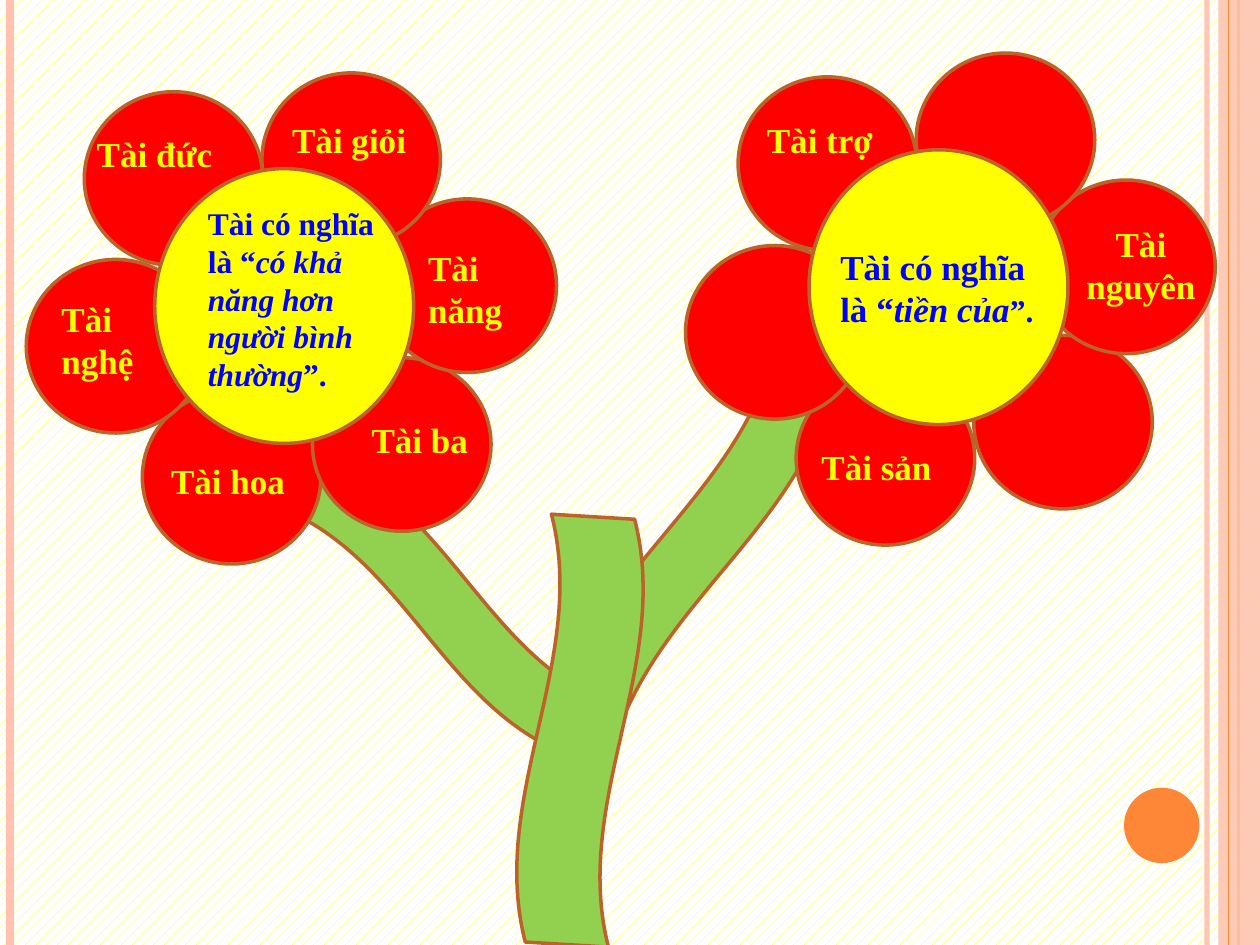
from lxml import etree
from pptx import Presentation
from pptx import util as u
from pptx.dml.color import RGBColor
from pptx.enum import dml, shapes, text
from pptx.oxml.ns import qn

COLORS = {"peach": "FEC3AE", "orange": "FE8637", "green": "92D050", "brown": "BC6329",
          "red": "FF0000", "yellow": "FFFF00", "blue": "0000FF", "white": "FFFFFF"}
FONT = "Times New Roman"
SLIDE_WIDTH, SLIDE_HEIGHT = 25.4, 19.05  # all lengths in cm
PETAL_SIZE = (3.6, 3.5)
HEART_SIZE = (5.22, 5.54)

# Border rules: x, colour, width in points, opacity in percent
LEFT_RULES = [(24.33, "peach", 3, 93), (0.2, "peach", 4.5, 100), (24.97, "orange", 1.5, 100)]
BAND_RULE = (24.77, "orange", 0.75, 100)
BAND = (24.56, 0, 0.84, SLIDE_HEIGHT)
DOT = (22.66, 15.88, 1.52, 1.52)

# Stems: box and rotation
BRANCHES = [((5.38, 11.33, 7.19, 1.78), 221.8), ((9.8, 10.24, 8.31, 1.85), 121.8)]
TRUNK = ((7.37, 13.61, 8.64, 2.24), 93.5)

# Flowers: petal corners, heart corner, caption box, caption runs (text, size, italic)
FLOWERS = [
    {"petals": [(2.87, 7.87), (0.53, 5.23), (1.7, 1.85), (6.3, 7.21), (7.62, 4.01), (5.28, 1.47)],
     "heart": (3.12, 3.4), "caption": (3.94, 3.99, 4.32, 4.11),
     "runs": [("Tài có nghĩa là “", 18, False),
              ("có khả năng hơn người bình thường", 18, True), ("”.", 18, False)]},
    {"petals": [(16.05, 7.49), (13.82, 4.95), (14.88, 1.55), (19.63, 6.76), (20.9, 3.63), (18.47, 1.07)],
     "heart": (16.31, 3.02), "caption": (16.69, 4.83, 4.7, 1.96),
     "runs": [("Tài có nghĩa là “", 20, False), ("tiền của", 20, True), ("”.", 18, False)]},
]

# Petal labels: text, left, top, width, lines, alignment
LEFT, CENTER = text.PP_ALIGN.LEFT, text.PP_ALIGN.CENTER
LABELS = [
    ("Tài giỏi", 5.64, 2.26, 2.92, 1, LEFT),
    ("Tài năng", 8.38, 4.85, 2.92, 2, LEFT),
    ("Tài ba", 7.24, 8.31, 2.92, 1, LEFT),
    ("Tài đức", 1.7, 2.54, 2.92, 1, LEFT),
    ("Tài hoa", 3.2, 9.14, 2.92, 1, LEFT),
    ("Tài nghệ", 0.99, 5.87, 2.11, 2, LEFT),
    ("Tài nguyên", 21.54, 4.37, 2.92, 2, CENTER),
    ("Tài trợ", 15.21, 2.26, 2.92, 1, LEFT),
    ("Tài sản", 16.31, 8.86, 2.92, 1, LEFT),
]
LABEL_HEIGHTS = {1: 1.12, 2: 1.96}


def color(name):
    return RGBColor.from_string(COLORS[name])


def set_opacity(element, percent):
    if percent < 100:
        rgb = next(element.iter(qn("a:srgbClr")))
        etree.SubElement(rgb, qn("a:alpha")).set("val", str(percent * 1000))


def add_rule(slide, x, name, width, opacity):
    rule = slide.shapes.add_connector(shapes.MSO_CONNECTOR.STRAIGHT, u.Cm(x), 0,
                                      u.Cm(x), u.Cm(SLIDE_HEIGHT))
    rule.line.color.rgb = color(name)
    rule.line.width = u.Pt(width)
    properties = rule._element.spPr
    set_opacity(properties, opacity)
    etree.SubElement(properties, qn("a:effectLst"))


def add_form(slide, kind, box, fill, rotation=0, outlined=True, opacity=100):
    shape = slide.shapes.add_shape(kind, *map(u.Cm, box))
    shape.shadow.inherit = False
    shape.rotation = rotation
    shape.fill.solid()
    shape.fill.fore_color.rgb = color(fill)
    set_opacity(shape._element.spPr, opacity)
    if outlined:
        shape.line.color.rgb = color("brown")
        shape.line.width = u.Pt(2)
    else:
        shape.line.fill.background()


def add_text(slide, box, runs, name, alignment=LEFT):
    frame = slide.shapes.add_textbox(*map(u.Cm, box)).text_frame
    frame.word_wrap = True
    frame.auto_size = text.MSO_AUTO_SIZE.SHAPE_TO_FIT_TEXT
    paragraph = frame.paragraphs[0]
    paragraph.alignment = alignment
    for words, size, italic in runs:
        run = paragraph.add_run()
        run.text = words
        run.font.color.rgb = color(name)
        formats = {"name": FONT, "size": u.Pt(size), "bold": True, "italic": italic}
        for attribute, value in formats.items():
            setattr(run.font, attribute, value)


def main():
    presentation = Presentation()
    presentation.slide_width = u.Cm(SLIDE_WIDTH)
    presentation.slide_height = u.Cm(SLIDE_HEIGHT)
    slide = presentation.slides.add_slide(presentation.slide_layouts[6])
    kinds = shapes.MSO_SHAPE

    # Patterned background
    background = slide.background.fill
    background.patterned()
    background.pattern = dml.MSO_PATTERN.PERCENT_20
    background.fore_color.rgb = color("yellow")
    background.back_color.rgb = color("white")

    # Border decoration
    for rule in LEFT_RULES:
        add_rule(slide, *rule)
    add_form(slide, kinds.RECTANGLE, BAND, "peach", outlined=False, opacity=87)
    add_rule(slide, *BAND_RULE)
    add_form(slide, kinds.OVAL, DOT, "orange", outlined=False)

    # Branches behind the flowers
    for box, rotation in BRANCHES:
        add_form(slide, kinds.WAVE, box, "green", rotation)

    # Flowers
    for flower in FLOWERS:
        for corner in flower["petals"]:
            add_form(slide, kinds.OVAL, corner + PETAL_SIZE, "red")
        add_form(slide, kinds.OVAL, flower["heart"] + HEART_SIZE, "yellow")
        add_text(slide, flower["caption"], flower["runs"], "blue")

    # Petal labels
    for words, left, top, width, lines, alignment in LABELS:
        box = (left, top, width, LABEL_HEIGHTS[lines])
        add_text(slide, box, [(words, 20, False)], "yellow", alignment)

    # Trunk in front
    box, rotation = TRUNK
    add_form(slide, kinds.WAVE, box, "green", rotation)

    presentation.save("out.pptx")


if __name__ == "__main__":
    main()
